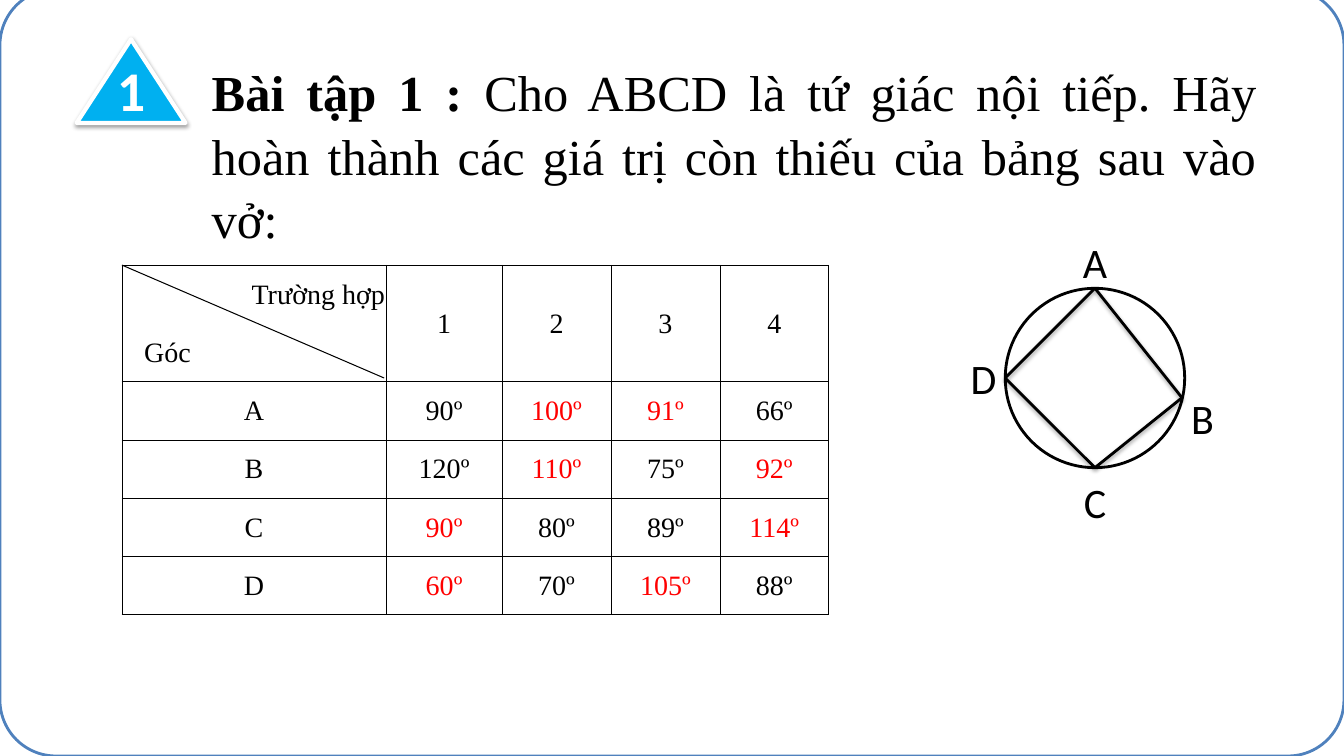
import pptx
import pptx.util
import pptx.dml.color
import pptx.enum.shapes
import pptx.enum.text
import pptx.oxml
import pptx.oxml.ns
import lxml.etree
import dataclasses


@dataclasses.dataclass(frozen=True)
class Theme:
    ink: str = "000000"
    paper: str = "FFFFFF"
    edge: str = "4F81BD"
    badge: str = "00B0F0"
    answer: str = "FF0000"
    serif: str = "Times New Roman"
    sans: str = "Calibri"
    title: int = 36
    number: int = 40
    label: int = 30
    cell: int = 20


THEME = Theme()
COLS, ROWS = 133.3, 75  # grid of tenths of an inch
SHAPE = pptx.enum.shapes.MSO_SHAPE
ALIGN = pptx.enum.text.PP_ALIGN
ANCHOR = pptx.enum.text.MSO_ANCHOR

# Known values are plain; those to be filled in carry a star
CASES = ["1", "2", "3", "4"]
ANGLES = {
    "A": ["90º", "100º*", "91º*", "66º"],
    "B": ["120º", "110º*", "75º", "92º*"],
    "C": ["90º*", "80º", "89º", "114º*"],
    "D": ["60º*", "70º", "105º*", "88º"],
}


def grid(*sizes):
    return [pptx.util.Inches(size / 10) for size in sizes]


def color(code):
    return pptx.dml.color.RGBColor.from_string(code)


def write(frame, text, size, font=THEME.serif, ink=THEME.ink, bold=False,
          align=ALIGN.CENTER, anchor=ANCHOR.MIDDLE):
    frame.word_wrap = True
    frame.vertical_anchor = anchor
    para = frame.paragraphs[0]
    para.alignment = align
    run = para.add_run()
    run.text = text
    run.font.size = pptx.util.Pt(size)
    run.font.name = font
    run.font.bold = bold
    run.font.color.rgb = color(ink)


def shade(shape, shadow):
    effects = lxml.etree.SubElement(shape.element.spPr, pptx.oxml.ns.qn("a:effectLst"))
    if shadow:
        effects.append(pptx.oxml.parse_xml(
            f'<a:outerShdw {pptx.oxml.ns.nsdecls("a")} blurRad="40000" dist="20000" '
            'dir="5400000" rotWithShape="0"><a:srgbClr val="000000">'
            '<a:alpha val="38000"/></a:srgbClr></a:outerShdw>'))


def form(slide, kind, box, fill, edge, width, shadow=False):
    shape = slide.shapes.add_shape(kind, *grid(*box))
    shape.fill.solid()
    shape.fill.fore_color.rgb = color(fill)
    shape.line.color.rgb = color(edge)
    shape.line.width = pptx.util.Pt(width)
    shade(shape, shadow)
    return shape


def stroke(slide, start, end, width, shadow=False):
    line = slide.shapes.add_connector(
        pptx.enum.shapes.MSO_CONNECTOR.STRAIGHT, *grid(*start, *end))
    line.line.color.rgb = color(THEME.ink)
    line.line.width = pptx.util.Pt(width)
    shade(line, shadow)


def border(cell, hidden=""):
    props = cell._tc.get_or_add_tcPr()
    for index, side in enumerate("LRTB"):
        paint = "<a:noFill/>" if side in hidden else (
            f'<a:solidFill><a:srgbClr val="{THEME.ink}"/></a:solidFill>')
        props.insert(index, pptx.oxml.parse_xml(
            f'<a:ln{side} {pptx.oxml.ns.nsdecls("a")} w="6350">{paint}</a:ln{side}>'))


def fill_cell(cell, text, hidden="", left=0.1, **style):
    cell.fill.background()
    border(cell, hidden)
    cell.margin_left, cell.margin_top, cell.margin_right, cell.margin_bottom = grid(
        left, 0.1, 0.1, 0)
    cell.vertical_anchor = ANCHOR.MIDDLE
    if text:
        write(cell.text_frame, text, THEME.cell, **style)


def draw_frame(slide, box):
    frame = form(slide, SHAPE.ROUNDED_RECTANGLE, box, THEME.paper, THEME.edge, 2)
    frame.adjustments[0] = 0.073
    slide.shapes.title.element.addprevious(frame.element)


def draw_head(slide, box):
    left, top, width, height = box
    # Numbered badge
    badge = form(slide, SHAPE.ISOSCELES_TRIANGLE, (left, top, 10.8, 8.3),
                 THEME.badge, THEME.paper, 3, shadow=True)
    badge.text_frame.margin_bottom = pptx.util.Inches(0.3)
    write(badge.text_frame, "1", THEME.number, font=THEME.sans, ink=THEME.paper, bold=True)
    # Task
    title = slide.shapes.title
    title.left, title.top, title.width, title.height = grid(
        left + 12.4, top + 1.4, width - 12.4, height - 1.4)
    frame = title.text_frame
    frame.auto_size = pptx.enum.text.MSO_AUTO_SIZE.NONE
    style = dict(align=ALIGN.JUSTIFY, anchor=ANCHOR.TOP)
    write(frame, "Bài tập 1 : ", THEME.title, bold=True, **style)
    write(frame, "Cho ABCD là tứ giác nội tiếp. Hãy hoàn thành các giá trị "
          "còn thiếu của bảng sau vào vở:", THEME.title, **style)
    frame.paragraphs[0].line_spacing = 1.05


def draw_table(slide, box):
    left, top, width, height = box
    count = len(ANGLES) + 2
    table = slide.shapes.add_table(count, len(CASES) + 1, *grid(*box)).table
    table.first_row = table.horz_banding = False
    widths = [26.2, 11.5] + [(width - 37.7) / 3] * 3
    for column, size in zip(table.columns, grid(*widths)):
        column.width = size
    for row in table.rows:
        row.height = grid(height / count)[0]
    # Heading, two rows high
    fill_cell(table.cell(0, 0), "Trường hợp", hidden="B", align=ALIGN.RIGHT)
    fill_cell(table.cell(1, 0), "Góc", hidden="T", left=2.2, align=ALIGN.LEFT)
    for spot, case in enumerate(CASES, 1):
        table.cell(0, spot).merge(table.cell(1, spot))
        fill_cell(table.cell(0, spot), case)
        fill_cell(table.cell(1, spot), "")
    # Angles
    for line, (name, values) in enumerate(ANGLES.items(), 2):
        for spot, value in enumerate([name] + values):
            ink = THEME.answer if value.endswith("*") else THEME.ink
            fill_cell(table.cell(line, spot), value.rstrip("*"), ink=ink)
    stroke(slide, (left, top), (left + 26, top + 11.2), 0.75)


def draw_circle(slide, box):
    left, top, size, _ = box
    radius = size / 2
    form(slide, SHAPE.OVAL, box, THEME.paper, THEME.ink, 2)

    def place(point):
        return left + radius * (1 + point[0]), top + radius * (1 + point[1])

    # Corner and label centre, in radii from the centre of the circle
    corners = {
        "A": ((0, -1), (0, -1.3)),
        "B": ((0.97, 0.22), (1.2, 0.44)),
        "C": ((0, 1), (0, 1.38)),
        "D": ((-1, 0), (-1.24, 0)),
    }
    points = [place(corner) for corner, _ in corners.values()]
    for start, end in zip(points, points[1:] + points[:1]):
        stroke(slide, start, end, 2, shadow=True)
    for name, (_, spot) in corners.items():
        x, y = place(spot)
        label = slide.shapes.add_textbox(*grid(x - 3.2, y - 3, 6.4, 6))
        write(label.text_frame, name, THEME.label, font=THEME.sans)


def main():
    deck = pptx.Presentation()
    deck.slide_width, deck.slide_height = grid(COLS, ROWS)
    slide = deck.slides.add_slide(deck.slide_layouts[5])
    draw_frame(slide, (0, -1.1, COLS, ROWS + 1.1))
    draw_head(slide, (7.6, 3.9, 118.1, 20.6))
    draw_table(slide, (12.1, 26.3, 70.1, 34.7))
    draw_circle(slide, (99.7, 28.6, 17.8, 17.8))
    deck.save("out.pptx")


if __name__ == "__main__":
    main()
